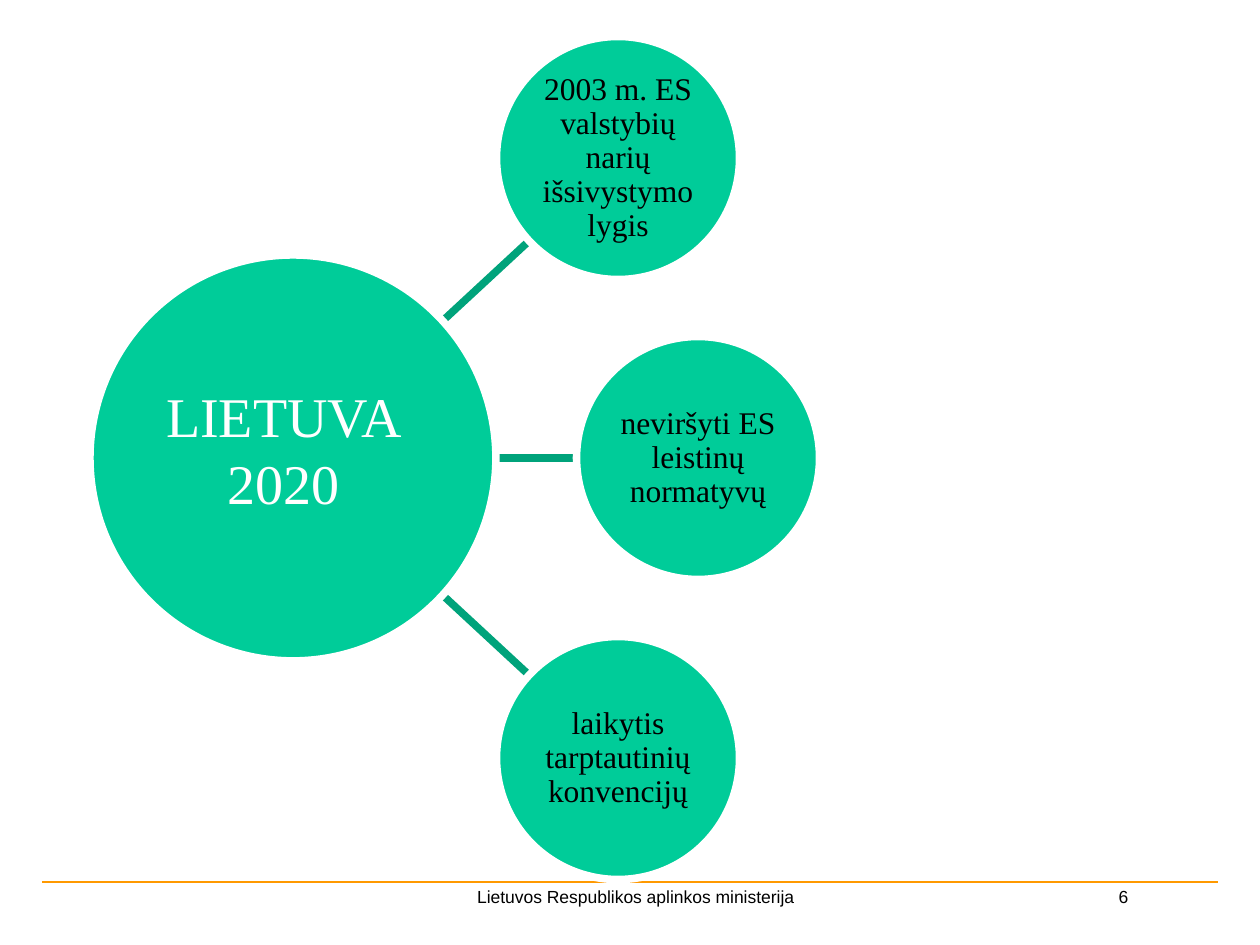
import pptx
import pptx.dml.color
import pptx.enum.shapes
import pptx.enum.text
import pptx.util
from pptx.oxml.ns import qn

PX = 914400 / 126
COLORS = {"green": "00CC99", "spoke": "00A37B", "white": "FFFFFF",
          "black": "000000", "orange": "FF9900"}
FOOTER = {"name": "Arial", "size": pptx.util.Pt(10)}
GOAL = {"name": "Times New Roman", "size": pptx.util.Pt(18)}
TITLE = {"name": "Times New Roman", "size": pptx.util.Pt(32)}


def emu(*lengths):
    return [pptx.util.Emu(round(length * PX)) for length in lengths]


def rgb(name):
    return pptx.dml.color.RGBColor.from_string(COLORS[name])


class Painter:
    """Draws styled elements on the current slide."""

    def __init__(self, slide):
        self.slide = slide

    def fill_text(self, shape, lines, font, color, inset=None, spacing=1.0, middle=True):
        frame = shape.text_frame
        anchor = pptx.enum.text.MSO_ANCHOR
        frame.word_wrap = True
        frame.vertical_anchor = anchor.MIDDLE if middle else anchor.TOP
        if inset is not None:
            for side in ("left", "right", "top", "bottom"):
                setattr(frame, f"margin_{side}", emu(inset)[0])
        for index, line in enumerate(lines):
            para = frame.add_paragraph() if index else frame.paragraphs[0]
            para.alignment = pptx.enum.text.PP_ALIGN.CENTER
            para.line_spacing = spacing
            span = para.add_run()
            span.text = line
            for key, value in font.items():
                setattr(span.font, key, value)
            span.font.color.rgb = rgb(color)

    def label(self, left, top, width, height, lines, font, color, **layout):
        box = self.slide.shapes.add_textbox(*emu(left, top, width, height))
        self.fill_text(box, lines, font, color, **layout)

    def line(self, start, end, color, weight):
        connector = self.slide.shapes.add_connector(
            pptx.enum.shapes.MSO_CONNECTOR.STRAIGHT, *emu(*start, *end))
        connector.line.color.rgb = rgb(color)
        connector.line.width = pptx.util.Pt(weight)
        properties = connector._element.spPr
        properties.append(properties.makeelement(qn("a:effectLst"), {}))

    def circle(self, center_x, center_y, diameter):
        radius = diameter / 2
        disc = self.slide.shapes.add_shape(
            pptx.enum.shapes.MSO_SHAPE.OVAL,
            *emu(center_x - radius, center_y - radius, diameter, diameter))
        disc.shadow.inherit = False
        disc.fill.solid()
        disc.fill.fore_color.rgb = rgb("green")
        disc.line.color.rgb = rgb("white")
        disc.line.width = pptx.util.Pt(4.33)
        return disc


def main():
    deck = pptx.Presentation()
    deck.slide_width, deck.slide_height = emu(1260, 945)
    painter = Painter(deck.slides.add_slide(deck.slide_layouts[6]))

    # Footer
    footer = {"spacing": 0.93, "middle": False}
    painter.label(273, 882, 725, 33, ["Lietuvos Respublikos aplinkos ministerija"],
                  FOOTER, "black", **footer)
    painter.line((1218, 882), (42, 882), "orange", 0.75)
    painter.label(1092, 882, 63, 33, ["6"], FOOTER, "black", **footer)

    # Spokes, partly covered by the circles
    middle, pitch = 458, 300
    for side in (1, -1):
        painter.line((435, middle + side * 130), (529, middle + side * 217), "spoke", 4.33)
    painter.line((435, middle), (577, middle), "spoke", 4.33)

    # Hub and goals
    painter.circle(293, middle, 406)
    goals = [(618, "2003 m. ES valstybių narių išsivystymo lygis"),
             (698, "neviršyti ES leistinų normatyvų"),
             (618, "laikytis tarptautinių konvencijų")]
    for row, (center_x, text) in enumerate(goals, start=-1):
        disc = painter.circle(center_x, middle + row * pitch, 243)
        painter.fill_text(disc, [text], GOAL, "black", inset=1, spacing=0.9)

    # Hub title
    painter.label(115, 374, 338, 149, ["LIETUVA", "2020"], TITLE, "white")

    deck.save("out.pptx")


if __name__ == "__main__":
    main()
